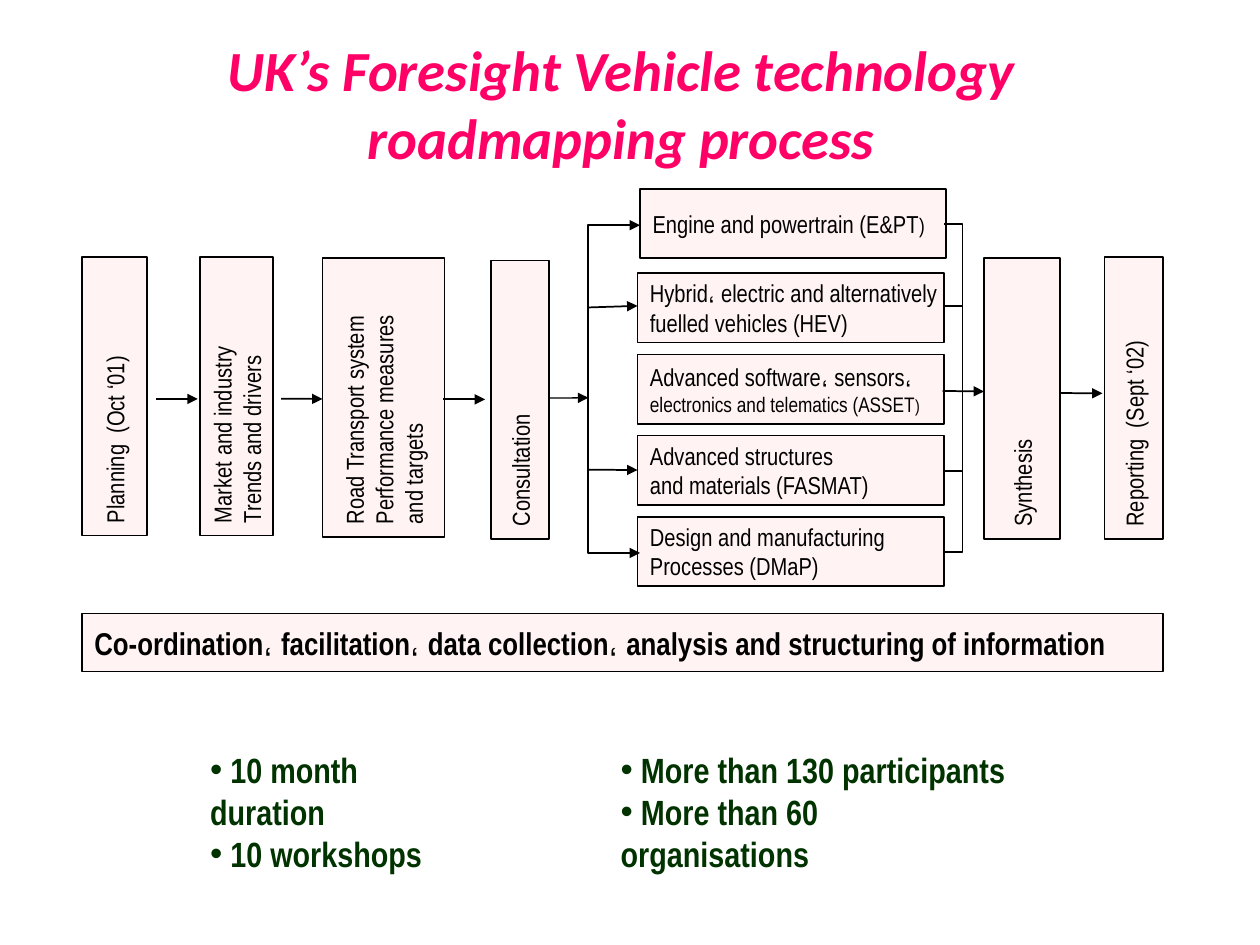
import lxml.etree
import pptx
import pptx.dml.color
import pptx.enum.shapes
import pptx.enum.text
import pptx.oxml.ns
import pptx.util

Pt = pptx.util.Pt
qn = pptx.oxml.ns.qn
PP_ALIGN = pptx.enum.text.PP_ALIGN
MSO_ANCHOR = pptx.enum.text.MSO_ANCHOR


def rgb(value):
    return pptx.dml.color.RGBColor.from_string(value)


def add_tag(parent, tag, **attributes):
    return lxml.etree.SubElement(parent, qn(tag), attributes)


class ProcessSlide:
    font = "Arial Narrow"
    ink = "000000"
    box_fill = "FFF3F3"

    def __init__(self, prs):
        self.slide = prs.slides.add_slide(prs.slide_layouts[6])
        self.shapes = self.slide.shapes

    def format_run(self, r, size, color, bold=False, italic=False, font=None):
        r.font.name = font or self.font
        r.font.size = Pt(size)
        r.font.bold = bold
        r.font.italic = italic
        r.font.color.rgb = rgb(color)

    def outline(self, sp, width=1):
        sp.line.color.rgb = rgb(self.ink)
        sp.line.width = Pt(width)

    def arrowheads(self, sp, *ends):
        for end in ends:
            add_tag(sp.line._get_or_add_ln(), f"a:{end}", type="triangle")

    def title(self, x, y, w, h, text):
        tf = self.shapes.add_textbox(Pt(x), Pt(y), Pt(w), Pt(h)).text_frame
        tf.margin_left = tf.margin_right = tf.margin_top = tf.margin_bottom = 0
        tf.word_wrap = True
        tf.vertical_anchor = MSO_ANCHOR.MIDDLE
        tf.text = text
        p = tf.paragraphs[0]
        p.alignment = PP_ALIGN.CENTER
        self.format_run(p.runs[0], 32.4, "FF0066", True, True, "Calibri")

    def box(self, x, y, w, h, lines, size=14, bold=False, vertical=False):
        sp = self.shapes.add_shape(
            pptx.enum.shapes.MSO_SHAPE.RECTANGLE, Pt(x), Pt(y), Pt(w), Pt(h))
        sp.shadow.inherit = False
        sp.fill.solid()
        sp.fill.fore_color.rgb = rgb(self.box_fill)
        self.outline(sp)
        tf = sp.text_frame
        tf.word_wrap = False
        tf.vertical_anchor = MSO_ANCHOR.MIDDLE
        if vertical:
            tf._txBody.bodyPr.set("vert", "vert270")
        for i, line in enumerate(lines):
            p = tf.add_paragraph() if i else tf.paragraphs[0]
            p.alignment = PP_ALIGN.LEFT
            for text, run_size in [(line, size)] if isinstance(line, str) else line:
                r = p.add_run()
                r.text = text
                self.format_run(r, run_size, self.ink, bold)

    def line(self, x1, y1, x2, y2, arrow=True, width=1):
        cn = self.shapes.add_connector(
            pptx.enum.shapes.MSO_CONNECTOR.STRAIGHT, Pt(x1), Pt(y1), Pt(x2), Pt(y2))
        self.outline(cn, width)
        if arrow:
            self.arrowheads(cn, "tailEnd")
        add_tag(cn._element.spPr, "a:effectLst")

    def bracket(self, points, *ends):
        start, *rest = [(Pt(x), Pt(y)) for x, y in points]
        fb = self.shapes.build_freeform(*start)
        fb.add_line_segments(rest, close=False)
        sp = fb.convert_to_shape()
        sp.shadow.inherit = False
        sp.fill.background()
        self.outline(sp)
        self.arrowheads(sp, *ends)

    def bullets(self, x, y, w, h, items):
        tf = self.shapes.add_textbox(Pt(x), Pt(y), Pt(w), Pt(h)).text_frame
        tf.word_wrap = True
        for i, item in enumerate(items):
            p = tf.add_paragraph() if i else tf.paragraphs[0]
            p.text = " " + item
            self.format_run(p.runs[0], 20, "003300", True)
            pPr = p._p.get_or_add_pPr()
            add_tag(pPr, "a:buFont", typeface="Arial")
            add_tag(pPr, "a:buChar", char="•")


def main():
    prs = pptx.Presentation()
    prs.slide_width, prs.slide_height = Pt(720), Pt(540)
    s = ProcessSlide(prs)

    s.title(41.8, 18, 626.4, 82, "UK’s Foresight Vehicle technology roadmapping process")

    stages = [
        (46.8, 146.9, 37.4, 159.1, ["Planning  (Oct ‘01)"]),
        (114.3, 146.9, 41.8, 159.1, ["Market and industry", "Trends and drivers"]),
        (184.3, 147.6, 69.8, 159.1,
         ["Road Transport system", "Performance measures", "and targets"]),
        (280.6, 148.8, 33.2, 159.1, ["Consultation"]),
        (562.4, 147.6, 43.4, 160.4, ["Synthesis"]),
        (631.2, 146.9, 33.3, 161.1, ["Reporting  (Sept ‘02)"]),
    ]
    for x, y, w, h, lines in stages:
        s.box(x, y, w, h, lines, vertical=True)

    s.box(365.8, 108, 175, 39.6, [[("Engine and powertrain (E&PT", 14), (")", 12)]])
    themes = [
        ["Hybrid، electric and alternatively", "fuelled vehicles (HEV)"],
        ["Advanced software، sensors،",
         [("electronics and telematics (ASSET", 12), (")", 10)]],
        ["Advanced structures", "and materials (FASMAT)"],
        ["Design and manufacturing", "Processes (DMaP)"],
    ]
    for i, lines in enumerate(themes):
        s.box(364.3, 156.1 + 46.4 * i, 175, 39.6, lines)

    s.box(46.8, 350.6, 617.8, 33.1,
          ["Co-ordination، facilitation، data collection، analysis and "
           "structuring of information"], size=18, bold=True)

    arrows = [
        (89.3, 228, 113, 228),
        (160.6, 227.8, 184.3, 228),
        (253.4, 228.2, 277.2, 228.2),
        (538.6, 223.4, 562.3, 223.7),
        (606.2, 224.6, 630, 224.8),
        (336.2, 268.4, 364.3, 268.6),
        (336.2, 175.7, 364.3, 174.8),
    ]
    for ends in arrows:
        s.line(*ends)
    s.line(313.9, 227.5, 336.2, 227.3, width=0.75)
    for y in (174.8, 269.2):
        s.line(539.3, y, 549.5, y, arrow=False)

    s.bracket([(540, 315.4), (550, 315.4), (550, 128.2), (539.3, 128.2)])
    s.bracket([(365.8, 128.7), (336.2, 128.7), (336.2, 316), (365.8, 316)],
              "headEnd", "tailEnd")

    s.bullets(113, 424.1, 167.8, 55.4, ["10 month duration", "10 workshops"])
    s.bullets(347.6, 424.1, 237.6, 55.4,
              ["More than 130 participants", "More than 60 organisations"])

    prs.save("out.pptx")


if __name__ == "__main__":
    main()
